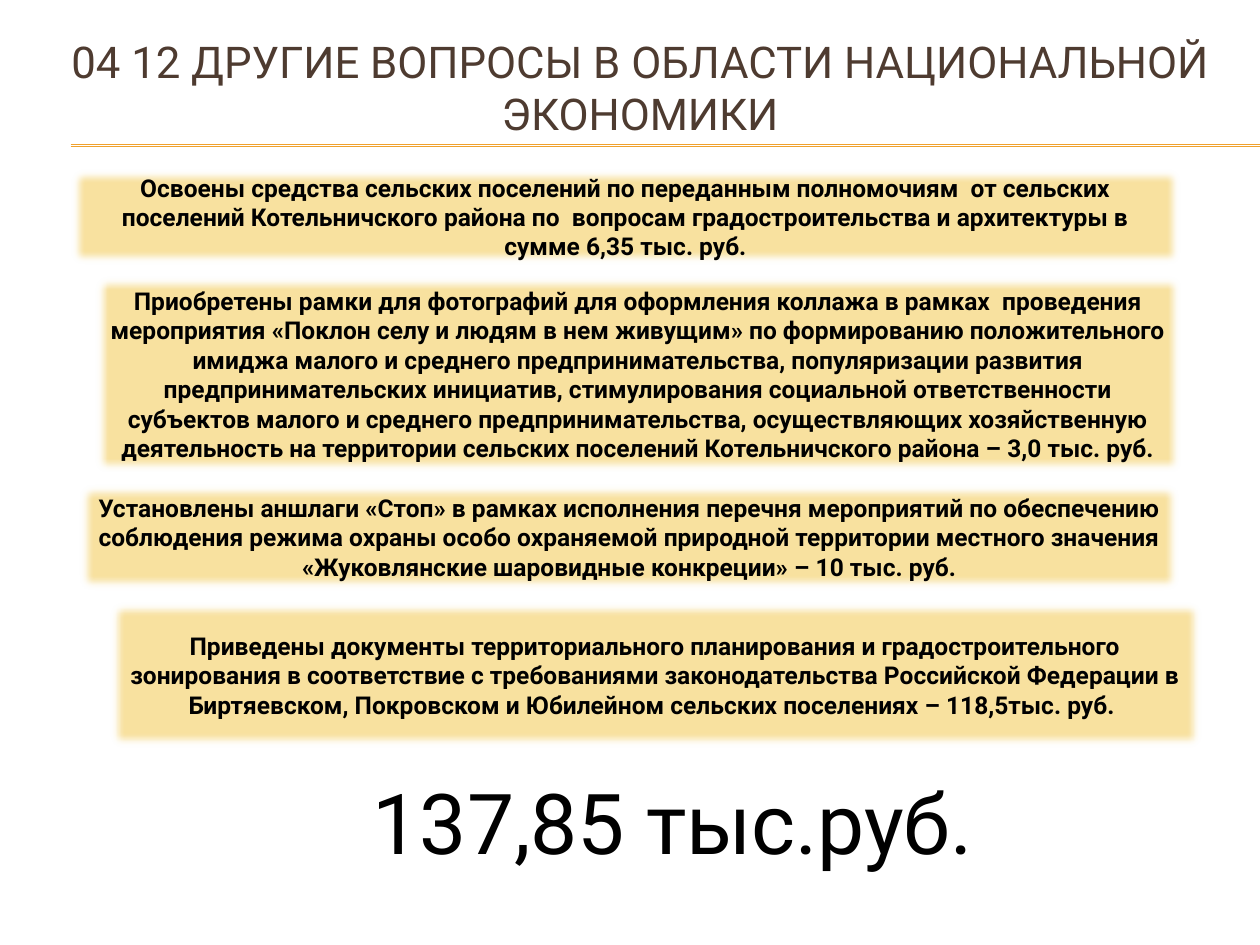
from lxml.etree import SubElement
from pptx import Presentation
from pptx.dml.color import RGBColor
from pptx.enum.shapes import MSO_CONNECTOR, MSO_SHAPE
from pptx.enum.text import MSO_ANCHOR, MSO_AUTO_SIZE, PP_ALIGN
from pptx.oxml.ns import qn
from pptx.util import Inches, Pt

WIDTH, HEIGHT = 10, 7.5
FONT = "Roboto"
BROWN, BLACK, GOLD = "4E3B30", "000000", "F0A22E"
SAND, OCHRE = "F8E19F", "B27822"
BLOCK_TOP, BLOCK_GAP = 17.73, 1.07
SOFT_EDGE = Pt(5)

TITLE = "04 12 ДРУГИЕ ВОПРОСЫ В ОБЛАСТИ НАЦИОНАЛЬНОЙ ЭКОНОМИКИ"
TOTAL = "137,85 тыс.руб."
BLOCKS = [
    (5.5, 88.3, 10.4,
     "Освоены средства сельских поселений по переданным полномочиям  от сельских "
     "поселений Котельничского района по  вопросам градостроительства и архитектуры "
     "в сумме 6,35 тыс. руб."),
    (7.5, 86.3, 20.8,
     "Приобретены рамки для фотографий для оформления коллажа в рамках  проведения "
     "мероприятия «Поклон селу и людям в нем живущим» по формированию положительного "
     "имиджа малого и среднего предпринимательства, популяризации развития "
     "предпринимательских инициатив, стимулирования социальной ответственности "
     "субъектов малого и среднего предпринимательства, осуществляющих хозяйственную "
     "деятельность на территории сельских поселений Котельничского района – 3,0 тыс. руб."),
    (6.2, 87.5, 11.47,
     "Установлены аншлаги «Стоп» в рамках исполнения перечня мероприятий по обеспечению "
     "соблюдения режима охраны особо охраняемой природной территории местного значения "
     "«Жуковлянские шаровидные конкреции» – 10 тыс. руб."),
    (8.6, 86.8, 15.6,
     "Приведены документы территориального планирования и градостроительного "
     "зонирования в соответствие с требованиями законодательства Российской Федерации в "
     "Биртяевском, Покровском и Юбилейном сельских поселениях – 118,5тыс. руб. "),
]


def color(value):
    return RGBColor.from_string(value)


def x(percent):
    return Inches(WIDTH * percent / 100)


def y(percent):
    return Inches(HEIGHT * percent / 100)


def box(left, top, width, height):
    return x(left), y(top), x(width), y(height)


def write(sp, text, size, fill, bold=False, anchor=MSO_ANCHOR.MIDDLE):
    tf = sp.text_frame
    tf.word_wrap = True
    tf.vertical_anchor = anchor
    p = tf.paragraphs[0]
    p.alignment = PP_ALIGN.CENTER
    r = p.add_run()
    r.text = text
    r.font.name = FONT
    r.font.size = Pt(size)
    r.font.bold = bold
    r.font.color.rgb = color(fill)
    return tf


def add_rule(s, top):
    line = s.shapes.add_connector(MSO_CONNECTOR.STRAIGHT, x(5.6), y(top), x(100), y(top))
    line.line.color.rgb = color(GOLD)
    line.line.width = Pt(0.75)
    SubElement(line._element.spPr, qn("a:effectLst"))


def add_text(s, place, text, size, fill, anchor):
    return write(s.shapes.add_textbox(*place), text, size, fill, anchor=anchor)


def add_block(s, place, text):
    sp = s.shapes.add_shape(MSO_SHAPE.RECTANGLE, *place)
    sp.fill.solid()
    sp.fill.fore_color.rgb = color(SAND)
    sp.line.color.rgb = color(OCHRE)
    sp.line.width = Pt(0.25)
    sp.shadow.inherit = False
    effects = sp._element.spPr.find(qn("a:effectLst"))
    SubElement(effects, qn("a:softEdge"), rad=str(SOFT_EDGE))
    write(sp, text, 14, BLACK, bold=True)


def main():
    prs = Presentation()
    prs.slide_width, prs.slide_height = Inches(WIDTH), Inches(HEIGHT)
    s = prs.slides.add_slide(prs.slide_layouts[6])

    for top in (15.33, 15.47):
        add_rule(s, top)
    add_text(s, box(3.3, 3.07, 95, 12.27), TITLE, 25, BROWN, MSO_ANCHOR.MIDDLE)

    top = BLOCK_TOP
    for left, width, height, text in BLOCKS:
        add_block(s, box(left, top, width, height), text)
        top += height + BLOCK_GAP

    tf = add_text(s, box(26.8, 80.93, 53.2, 12.13), TOTAL, 48, BLACK, MSO_ANCHOR.TOP)
    tf.auto_size = MSO_AUTO_SIZE.SHAPE_TO_FIT_TEXT

    prs.save("out.pptx")


if __name__ == "__main__":
    main()
